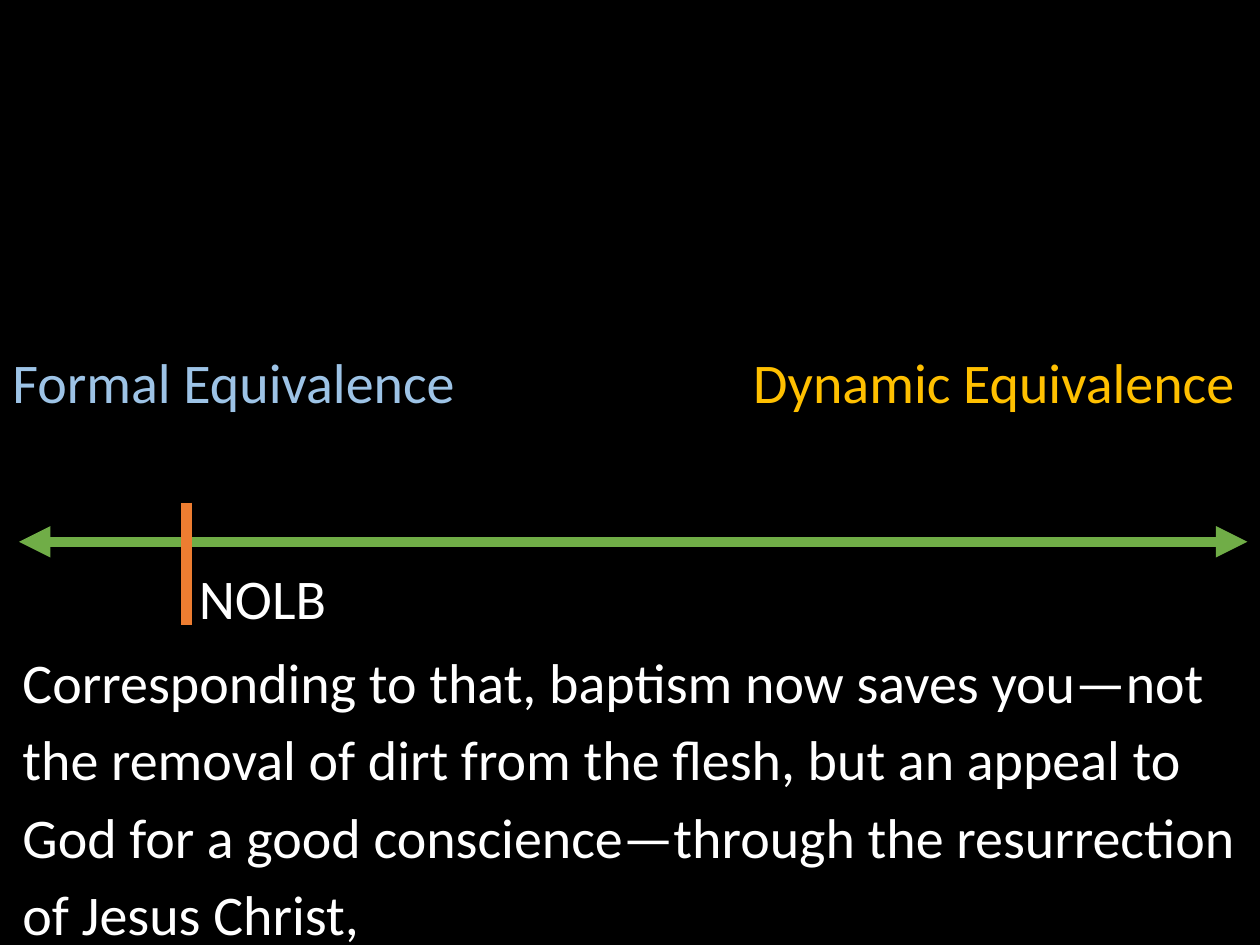
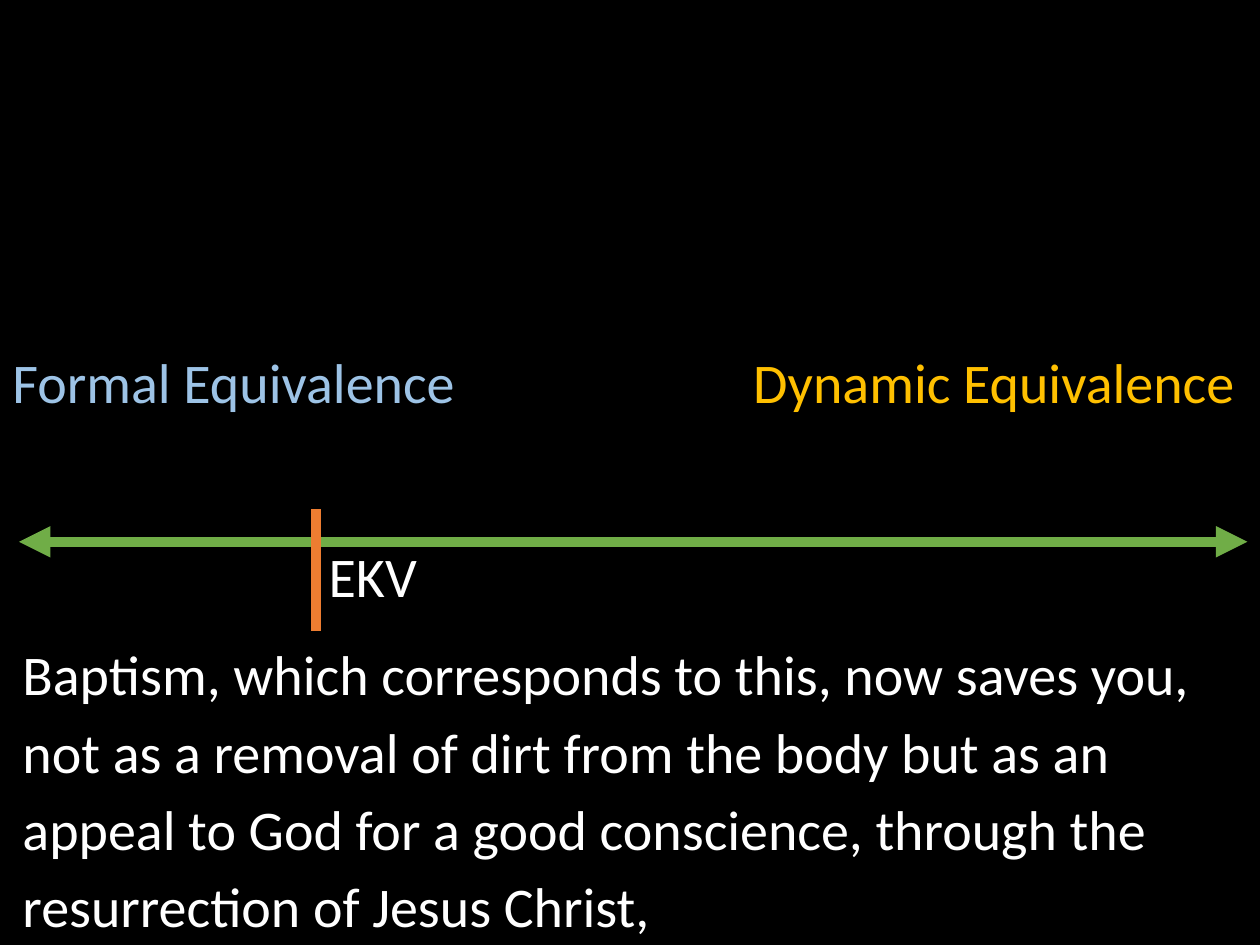
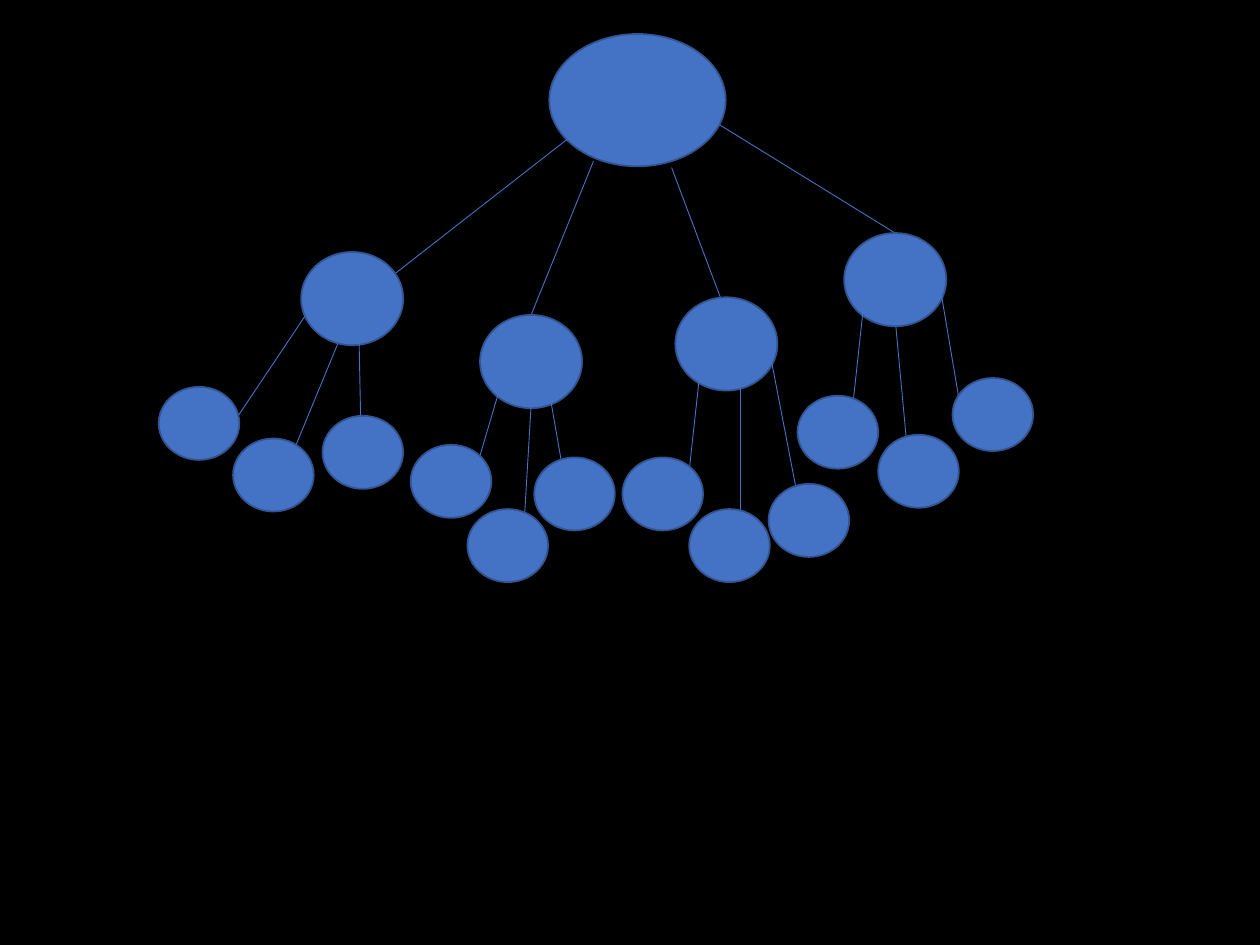
from pptx import Presentation
from pptx.dml.color import RGBColor
from pptx.enum.shapes import MSO_AUTO_SHAPE_TYPE, MSO_CONNECTOR
from pptx.oxml.ns import qn
from pptx.util import Inches, Pt
from lxml import etree

OVAL = MSO_AUTO_SHAPE_TYPE.OVAL
STRAIGHT = MSO_CONNECTOR.STRAIGHT
TOP_SITE = 0

BLACK = RGBColor(0x00, 0x00, 0x00)
WHITE = RGBColor(0xFF, 0xFF, 0xFF)
PALE_BLUE = RGBColor(0x9D, 0xC3, 0xE6)
GOLD = RGBColor(0xFF, 0xC0, 0x00)
GREEN = RGBColor(0x70, 0xAD, 0x47)
ORANGE = RGBColor(0xED, 0x7D, 0x31)
BLUE = RGBColor(0x44, 0x72, 0xC4)
DARK_BLUE = RGBColor(0x32, 0x54, 0x91)

VERSE_FORMAT = {"line_spacing": 1.15, "space_after": Pt(10)}
MARK_HEIGHT = 0.97

# name, mark left, mark top, name top, verse top, verse
TRANSLATIONS = [
    ("NOLB", 1.48, 3.99, 4.42, 5.01,
     "Corresponding to that, baptism now saves you—not the removal of dirt "
     "from the flesh, but an appeal to God for a good conscience—through "
     "the resurrection of Jesus Christ,"),
    ("EKV", 2.51, 4.04, 4.25, 4.95,
     "Baptism, which corresponds to this, now saves you, not as a removal of "
     "dirt from the body but as an appeal to God for a good conscience, "
     "through the resurrection of Jesus Christ,"),
]

ROOT_SIZE = (1.4, 1.05)
BRANCH_SIZE = (0.81, 0.74)
LEAF_SIZE = (0.64, 0.58)

# branch corner, line start, line end, whether the line meets the branch's top,
# and for each leaf: corner, line start, line end
BRANCHES = [
    ((2.39, 2.0), (4.56, 1.06), (3.06, 2.23), False, [
        ((1.26, 3.07), (2.42, 2.51), (1.77, 3.48)),
        ((1.85, 3.48), (2.68, 2.73), (2.28, 3.7)),
        ((2.56, 3.3), (2.85, 2.71), (2.87, 3.69))]),
    ((3.81, 2.5), (4.71, 1.28), (4.22, 2.5), True, [
        ((3.26, 3.53), (3.95, 3.14), (3.72, 3.92)),
        ((3.71, 4.04), (4.22, 3.14), (4.16, 4.15)),
        ((4.24, 3.63), (4.37, 3.17), (4.5, 3.92))]),
    ((5.36, 2.36), (5.33, 1.33), (5.77, 2.5), False, [
        ((4.94, 3.63), (5.55, 3.0), (5.44, 4.01)),
        ((5.47, 4.04), (5.88, 3.04), (5.88, 4.13)),
        ((6.1, 3.84), (6.12, 2.85), (6.34, 3.99))]),
    ((6.7, 1.85), (5.71, 0.99), (7.11, 1.85), True, [
        ((6.33, 3.14), (6.85, 2.46), (6.74, 3.48)),
        ((6.97, 3.45), (7.11, 2.59), (7.2, 3.56)),
        ((7.56, 3.0), (7.47, 2.33), (7.61, 3.16))]),
]


class Painter:
    """Holds the shared style and the page being drawn."""

    font_format = {"name": "Calibri", "size": Pt(32)}

    def __init__(self, deck):
        self.deck = deck
        self.page = None

    def new_page(self):
        self.page = self.deck.slides.add_slide(self.deck.slide_layouts[6])
        fill = self.page.background.fill
        fill.solid()
        fill.fore_color.rgb = BLACK

    def text(self, words, left, top, width, height, color=WHITE, para_format=None):
        box = self.page.shapes.add_textbox(
            Inches(left), Inches(top), Inches(width), Inches(height))
        box.text_frame.word_wrap = True
        para = box.text_frame.paragraphs[0]
        for key, value in (para_format or {}).items():
            setattr(para, key, value)
        span = para.add_run()
        span.text = words
        for key, value in self.font_format.items():
            setattr(span.font, key, value)
        span.font.color.rgb = color

    def line(self, start, end, color, weight, arrows=False):
        line = self.page.shapes.add_connector(
            STRAIGHT, *(Inches(value) for value in (*start, *end)))
        line.line.color.rgb = color
        line.line.width = Pt(weight)
        if arrows:
            outline = line.line._get_or_add_ln()
            for tag in ("a:headEnd", "a:tailEnd"):
                etree.SubElement(outline, qn(tag), type="triangle")
        etree.SubElement(line._element.spPr, qn("a:effectLst"))
        return line

    def node(self, corner, size):
        node = self.page.shapes.add_shape(
            OVAL, *(Inches(value) for value in (*corner, *size)))
        node.shadow.inherit = False
        node.fill.solid()
        node.fill.fore_color.rgb = BLUE
        node.line.color.rgb = DARK_BLUE
        node.line.width = Pt(1)
        return node

    def link(self, start, end):
        return self.line(start, end, BLUE, 0.5)


def draw_translation(painter, name, left, mark_top, name_top, verse_top, verse):
    painter.new_page()
    painter.text("Formal Equivalence", 0, 2.71, 3.92, 0.64, PALE_BLUE)
    painter.text("Dynamic Equivalence", 5.88, 2.71, 4.03, 0.64, GOLD)
    painter.line((0.15, 4.3), (9.9, 4.3), GREEN, 6, arrows=True)
    painter.line((left, mark_top), (left, mark_top + MARK_HEIGHT), ORANGE, 6)
    painter.text(verse, 0.08, verse_top, 9.85, 2.54, para_format=VERSE_FORMAT)
    painter.text(name, left, name_top, 2.03, 0.64)


def draw_tree(painter):
    painter.new_page()
    painter.node((4.36, 0.27), ROOT_SIZE)
    for corner, start, end, meets_top, leaves in BRANCHES:
        link = painter.link(start, end)
        branch = painter.node(corner, BRANCH_SIZE)
        if meets_top:
            link.end_connect(branch, TOP_SITE)
        for leaf_corner, leaf_start, leaf_end in leaves:
            painter.link(leaf_start, leaf_end)
            painter.node(leaf_corner, LEAF_SIZE)


def main():
    deck = Presentation()
    deck.slide_width = Inches(10)
    deck.slide_height = Inches(7.5)
    painter = Painter(deck)
    for translation in TRANSLATIONS:
        draw_translation(painter, *translation)
    draw_tree(painter)
    deck.save("out.pptx")


if __name__ == "__main__":
    main()
